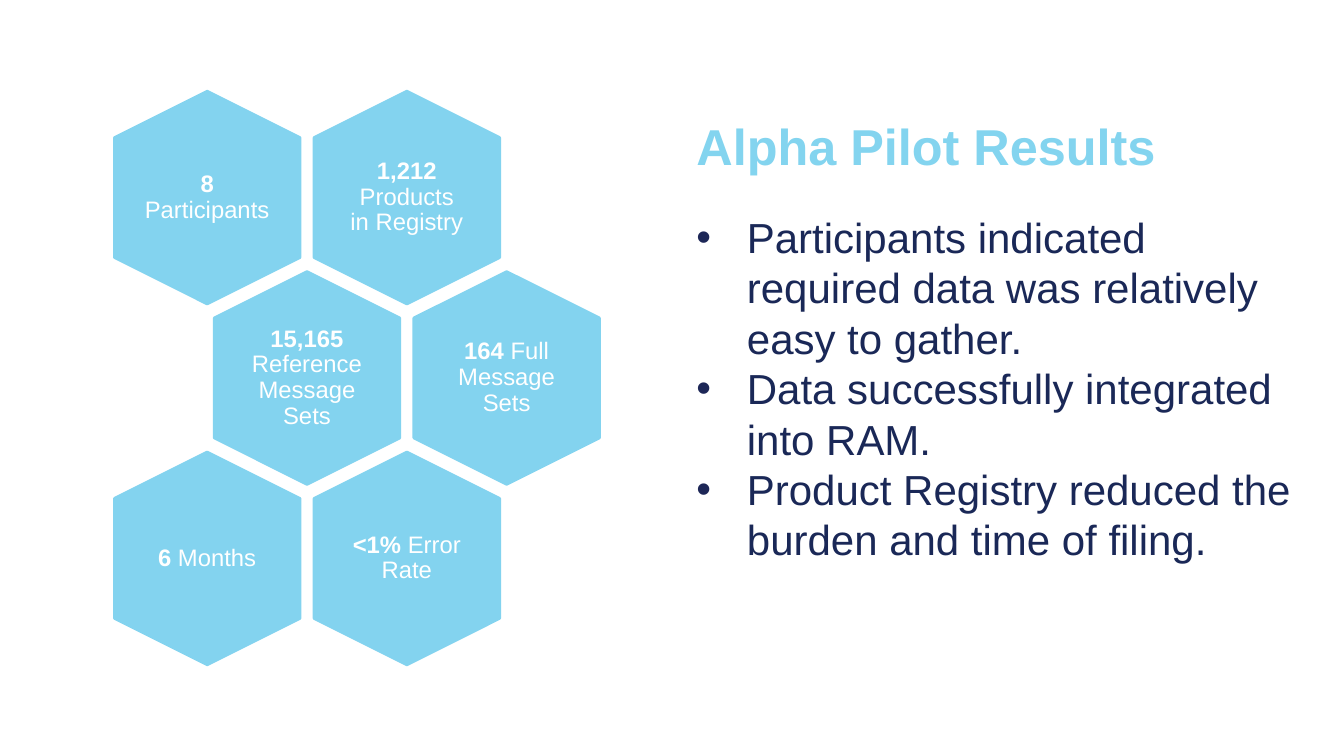
import pptx
import pptx.dml.color
import pptx.enum.shapes
import pptx.enum.text
import pptx.oxml
import pptx.oxml.ns
import pptx.util

RGBColor = pptx.dml.color.RGBColor
SKY = RGBColor(0x83, 0xD3, 0xEF)
TITLE_BLUE = RGBColor(0x83, 0xD4, 0xEF)
NAVY = RGBColor(0x1A, 0x28, 0x57)
BULLET_NAVY = RGBColor(0x1D, 0x27, 0x57)
WHITE = RGBColor(0xFF, 0xFF, 0xFF)

HEX_ROWS = [
    (100, [("8", " Participants", 0), ("1,212 ", "Products in Registry", 7)]),
    (199, [("15,165", " Reference Message Sets", 7), ("164", " Full Message Sets", 0)]),
    (100, [("6", " Months", 0), ("<1% ", "Error Rate", 7)]),
]
FINDINGS = [
    "Participants indicated required data was relatively easy to gather.",
    "Data successfully integrated into RAM.",
    "Product Registry reduced the burden and time of filing.",
]


class SlideBuilder:
    """Draws styled elements on one slide, in px of 1/100 inch."""

    FONT = "Arial"
    EMU_PER_PX = 9144

    def __init__(self, prs):
        self.s = prs.slides.add_slide(prs.slide_layouts[6])

    def px(self, *lengths):
        return [pptx.util.Emu(n * self.EMU_PER_PX) for n in lengths]

    def style(self, r, size, color, bold=False):
        r.font.name = self.FONT
        r.font.size = pptx.util.Pt(size)
        r.font.color.rgb = color
        r.font.bold = bold

    def text_box(self, x, y, w, h):
        tf = self.s.shapes.add_textbox(*self.px(x, y, w, h)).text_frame
        tf.word_wrap = True
        return tf

    def text(self, x, y, w, h, lines, size, color, bold=False, bullets=False):
        tf = self.text_box(x, y, w, h)
        tf.text = "\n".join(lines)
        for p in tf.paragraphs:
            p.line_spacing = pptx.util.Pt(size * 1.2)
            self.style(p.runs[0], size, color, bold)
            if bullets:
                self.bullet(p)

    def bullet(self, p):
        indent, = self.px(50)
        pPr = p._p.get_or_add_pPr()
        pPr.set("marL", str(indent))
        pPr.set("indent", str(-indent))
        ns = pptx.oxml.ns.nsdecls("a")
        for xml in (
            f'<a:buClr {ns}><a:srgbClr val="{BULLET_NAVY}"/></a:buClr>',
            f'<a:buFont {ns} typeface="{self.FONT}"/>',
            f'<a:buChar {ns} char="•"/>',
        ):
            pPr.append(pptx.oxml.parse_xml(xml))

    def hexagon(self, x, y, figure, label, inset):
        sp = self.s.shapes.add_shape(
            pptx.enum.shapes.MSO_SHAPE.HEXAGON, *self.px(x, y, 211, 184))
        sp.rotation = 90
        sp.shadow.inherit = False
        sp.fill.solid()
        sp.fill.fore_color.rgb = SKY
        sp.line.color.rgb = SKY
        sp.line.width = pptx.util.Pt(2)

        tf = self.text_box(x + 42, y + 19, 127, 146)
        tf.vertical_anchor = pptx.enum.text.MSO_ANCHOR.MIDDLE
        margin, = self.px(inset)
        tf.margin_left = tf.margin_right = margin
        tf.margin_top = tf.margin_bottom = margin
        p = tf.paragraphs[0]
        p.alignment = pptx.enum.text.PP_ALIGN.CENTER
        p.line_spacing = 0.9
        for words, bold in ((figure, True), (label, False)):
            r = p.add_run()
            r.text = words
            self.style(r, 17, WHITE, bold)


def main():
    prs = pptx.Presentation()
    prs.slide_width = pptx.util.Inches(13.33)
    prs.slide_height = pptx.util.Inches(7.5)
    slide = SlideBuilder(prs)
    slide.text(681, 109, 617, 90, ["Alpha Pilot Results"], 36, TITLE_BLUE, bold=True)
    slide.text(681, 205, 617, 421, FINDINGS, 30, NAVY, bullets=True)
    for row, (left, cells) in enumerate(HEX_ROWS):
        for col, cell in enumerate(cells):
            slide.hexagon(left + 198 * col, 104 + 179 * row, *cell)
    prs.save("out.pptx")


if __name__ == "__main__":
    main()
